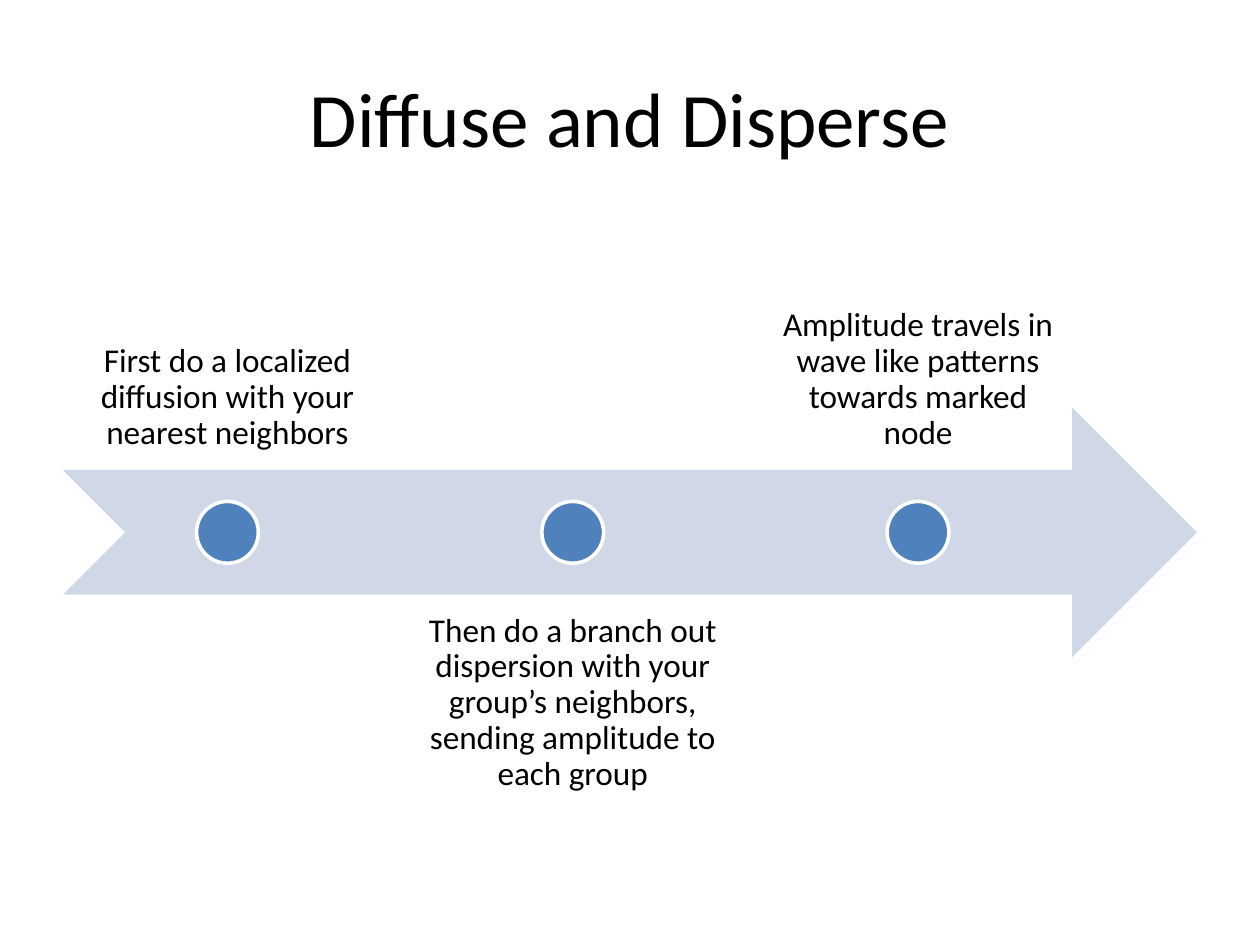
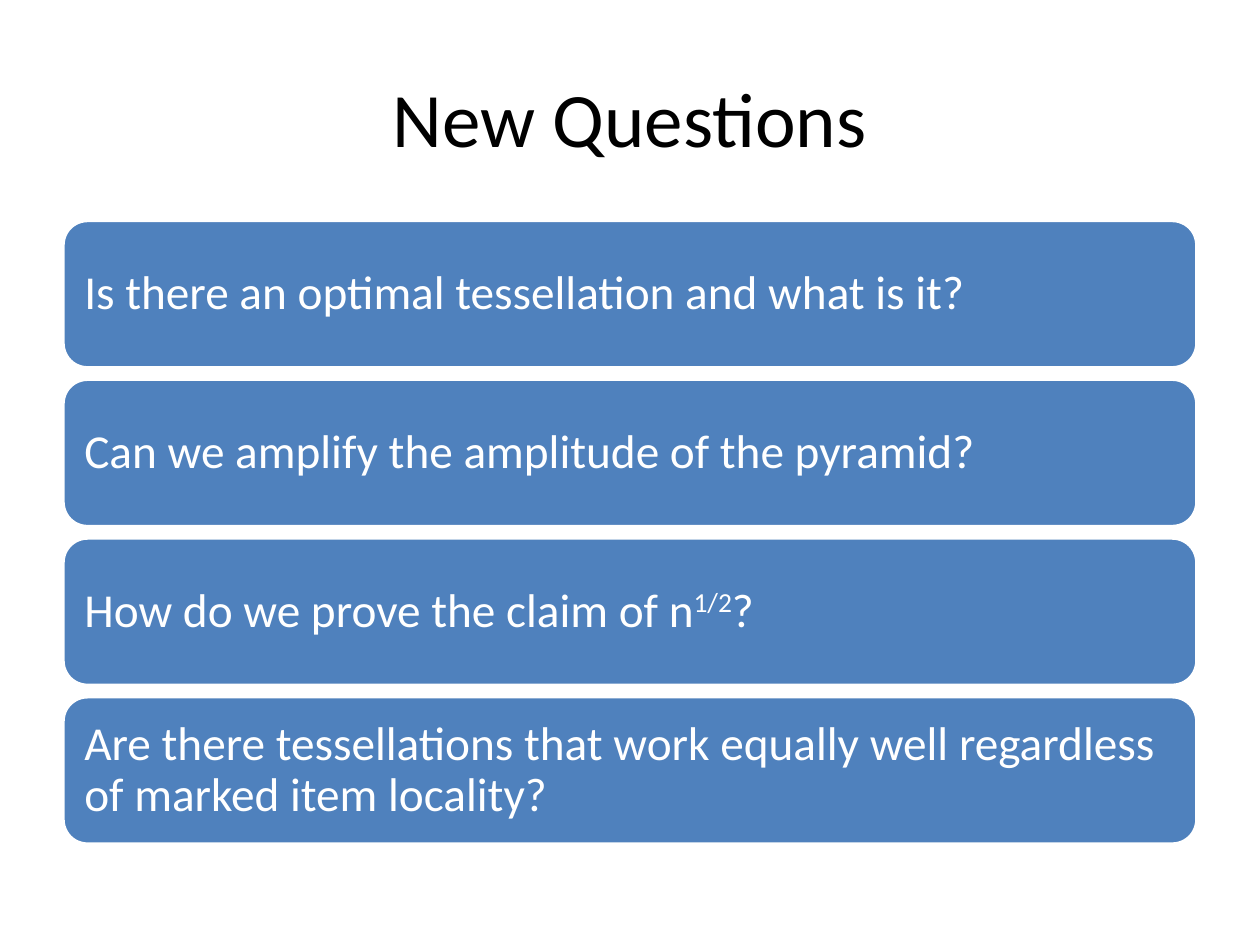
from pptx import Presentation
from pptx.dml.color import RGBColor
from pptx.enum.shapes import MSO_SHAPE
from pptx.enum.text import MSO_ANCHOR, PP_ALIGN
from pptx.util import Pt

NOTCHED_ARROW = MSO_SHAPE.NOTCHED_RIGHT_ARROW
OVAL = MSO_SHAPE.OVAL
ROUNDED = MSO_SHAPE.ROUNDED_RECTANGLE
TOP, MIDDLE, BOTTOM = MSO_ANCHOR.TOP, MSO_ANCHOR.MIDDLE, MSO_ANCHOR.BOTTOM
LEFT, CENTER = PP_ALIGN.LEFT, PP_ALIGN.CENTER

COLORS = {"text": "000000", "white": "FFFFFF", "blue": "4F81BD", "pale": "D0D8E8"}
FONT = "Calibri"
BLANK_LAYOUT = 6

MARGIN, CONTENT_WIDTH = 36, 648
BODY_TOP, BODY_HEIGHT = 126, 356.4

LABEL_WIDTH, BAND_HEIGHT = 187.92, 142.56
STEP_PITCH = LABEL_WIDTH * 1.05
DOT_SIZE = 35.3
QUESTION_HEIGHT = 84.24

STEPS = [
    "First do a localized diffusion with your nearest neighbors",
    "Then do a branch out dispersion with your group’s neighbors, "
    "sending amplitude to each group",
    "Amplitude travels in wave like patterns towards marked node",
]
# Each question is a list of (text, is_superscript) pieces.
QUESTIONS = [
    [("Is there an optimal tessellation and what is it?", False)],
    [("Can we amplify the amplitude of the pyramid?", False)],
    [("How do we prove the claim of n", False), ("1/2", True), ("?", False)],
    [("Are there tessellations that work equally well regardless "
      "of marked item locality?", False)],
]


def rgb(name):
    return RGBColor.from_string(COLORS[name])


def write(frame, pieces, size, color="text", align=CENTER, anchor=MIDDLE,
          inset=None, spacing=None):
    """Fill a text frame with one paragraph of (text, is_superscript) pieces."""
    frame_format = {"word_wrap": True, "vertical_anchor": anchor}
    if inset is not None:
        for side in ("left", "top", "right", "bottom"):
            frame_format[f"margin_{side}"] = Pt(inset)
    for name, value in frame_format.items():
        setattr(frame, name, value)
    paragraph = frame.paragraphs[0]
    paragraph.alignment = align
    paragraph.line_spacing = spacing
    for text, is_superscript in pieces:
        run = paragraph.add_run()
        run.text = text
        for name, value in {"name": FONT, "size": Pt(size)}.items():
            setattr(run.font, name, value)
        run.font.color.rgb = rgb(color)
        if is_superscript:
            run._r.get_or_add_rPr().set("baseline", "30000")


def add_text(slide, text, left, top, width, height, size, **text_format):
    box = slide.shapes.add_textbox(Pt(left), Pt(top), Pt(width), Pt(height))
    write(box.text_frame, [(text, False)], size, **text_format)


def add_filled(slide, kind, left, top, width, height, fill, outlined=True):
    shape = slide.shapes.add_shape(kind, Pt(left), Pt(top), Pt(width), Pt(height))
    shape.shadow.inherit = False
    shape.fill.solid()
    shape.fill.fore_color.rgb = rgb(fill)
    if outlined:
        shape.line.color.rgb = rgb("white")
        shape.line.width = Pt(2)
    else:
        shape.line.fill.background()
    return shape


def add_titled_slide(prs, title):
    slide = prs.slides.add_slide(prs.slide_layouts[BLANK_LAYOUT])
    add_text(slide, title, MARGIN, 21.6, CONTENT_WIDTH, 90, 44)
    return slide


def add_timeline(slide, steps):
    """Draw the arrow with a dot per step and labels alternately above and below."""
    middle = BODY_TOP + BODY_HEIGHT / 2
    add_filled(slide, NOTCHED_ARROW, MARGIN, middle - BAND_HEIGHT / 2,
               CONTENT_WIDTH, BAND_HEIGHT, "pale", outlined=False)
    for index, step in enumerate(steps):
        left = MARGIN + index * STEP_PITCH
        above = index % 2 == 0
        label_top = BODY_TOP if above else BODY_TOP + BODY_HEIGHT - BAND_HEIGHT
        add_text(slide, step, left, label_top, LABEL_WIDTH, BAND_HEIGHT, 19,
                 anchor=BOTTOM if above else TOP, inset=10.64, spacing=0.9)
        add_filled(slide, OVAL, left + (LABEL_WIDTH - DOT_SIZE) / 2,
                   middle - DOT_SIZE / 2, DOT_SIZE, DOT_SIZE, "blue")


def add_question_list(slide, questions):
    pitch = (BODY_HEIGHT - QUESTION_HEIGHT) / (len(questions) - 1)
    for index, pieces in enumerate(questions):
        bar = add_filled(slide, ROUNDED, MARGIN, BODY_TOP + index * pitch,
                         CONTENT_WIDTH, QUESTION_HEIGHT, "blue")
        write(bar.text_frame, pieces, 27, color="white", align=LEFT,
              inset=8.1, spacing=0.9)


def main():
    prs = Presentation()
    prs.slide_width, prs.slide_height = Pt(720), Pt(540)
    add_timeline(add_titled_slide(prs, "Diffuse and Disperse"), STEPS)
    add_question_list(add_titled_slide(prs, "New Questions"), QUESTIONS)
    prs.save("out.pptx")


if __name__ == "__main__":
    main()
